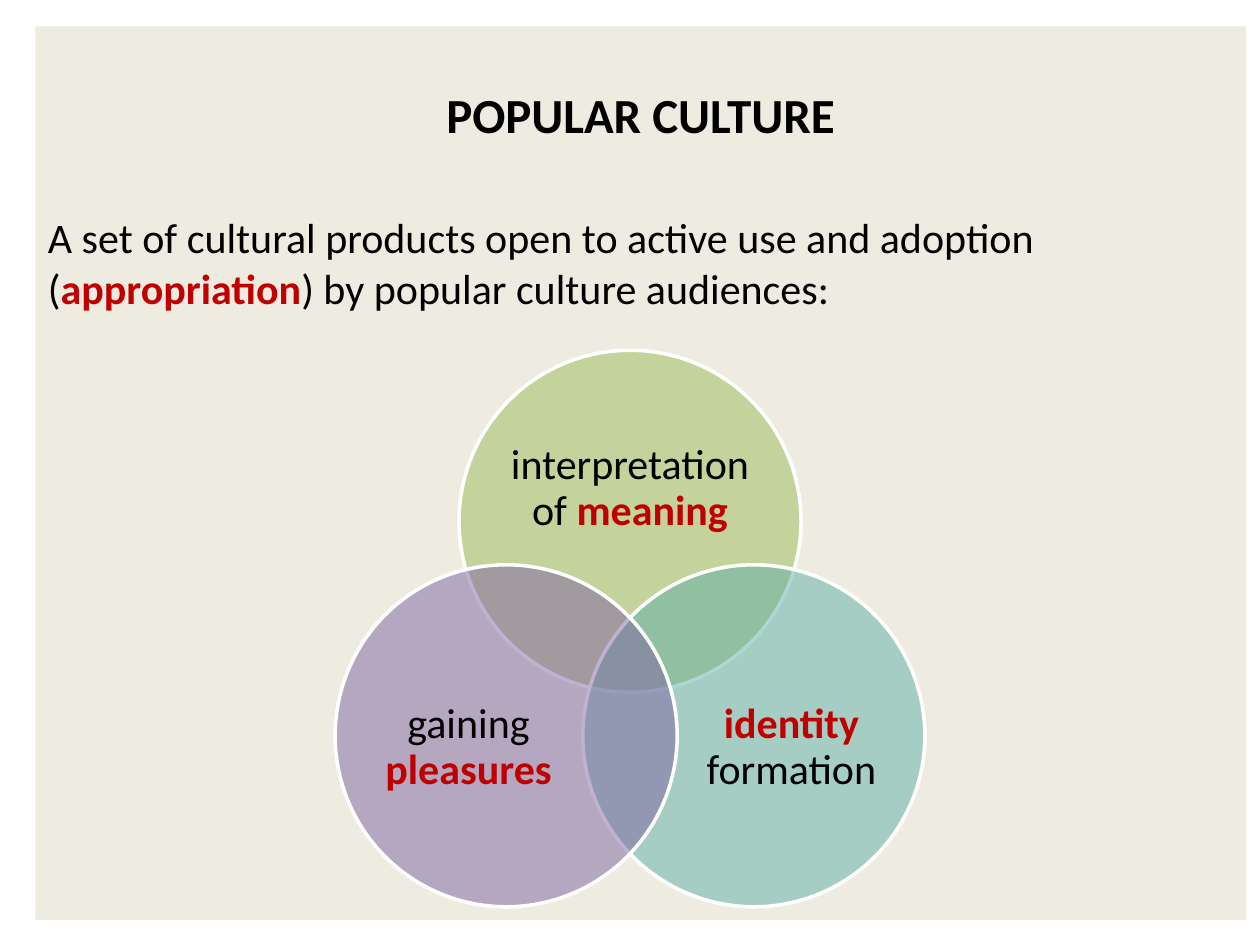
import math
from dataclasses import dataclass

import pptx
import pptx.dml.color
import pptx.enum.shapes
import pptx.enum.text
import pptx.oxml.ns
import pptx.util
from lxml import etree

Inches = pptx.util.Inches
qn = pptx.oxml.ns.qn
ALIGN = pptx.enum.text.PP_ALIGN
ANCHOR = pptx.enum.text.MSO_ANCHOR


@dataclass(frozen=True)
class Theme:
    font: str = "Calibri"
    title_size: int = 28
    text_size: int = 24
    text: str = "000000"
    keyword: str = "C00000"
    panel: str = "EEECE1"
    outline: str = "FFFFFF"
    meaning: str = "9BBB59"
    identity: str = "5EAFA6"
    pleasures: str = "8064A2"


THEME = Theme()
PANEL = (0.28, 0.21, 9.61, 7.09)
VENN = (2.66, 2.78, 4.68, 4.42)

# Each run is (words, is keyword).
DEFINITION = [
    ("A set of cultural products open to active use and adoption (", False),
    ("appropriation", True),
    (") by popular culture audiences:", False),
]
# Colour, angle of the circle, label box as shares of the circle, runs.
CIRCLES = [
    (THEME.meaning, -90, (0.13, 0.18, 0.74, 0.45),
     [("interpretation of ", False), ("meaning", True)]),
    (THEME.identity, 30, (0.31, 0.26, 0.6, 0.55),
     [("identity ", True), ("formation", False)]),
    (THEME.pleasures, 150, (0.09, 0.26, 0.6, 0.55),
     [("gaining ", False), ("pleasures", True)]),
]


def rgb(code):
    return pptx.dml.color.RGBColor.from_string(code)


def inches(box):
    return [Inches(length) for length in box]


def place(placeholder, box):
    (placeholder.left, placeholder.top,
     placeholder.width, placeholder.height) = inches(box)


def add_run(paragraph, words, size, color, bold):
    run = paragraph.add_run()
    run.text = words
    run.font.name = THEME.font
    run.font.size = pptx.util.Pt(size)
    run.font.color.rgb = rgb(color)
    run.font.bold = bold


def add_phrase(paragraph, phrase):
    """Add runs, with keywords bold and in the keyword colour."""
    for words, is_keyword in phrase:
        color = THEME.keyword if is_keyword else THEME.text
        add_run(paragraph, words, THEME.text_size, color, is_keyword)


def set_frame(frame, anchor, left=0, top=0):
    frame.word_wrap = True
    frame.auto_size = pptx.enum.text.MSO_AUTO_SIZE.NONE
    frame.vertical_anchor = anchor
    frame.margin_left = frame.margin_right = Inches(left)
    frame.margin_top, frame.margin_bottom = Inches(top), 0


def add_definition(slide, box):
    """Fill the body panel and set the title over its upper part."""
    left, top, width, height = box
    title, body = slide.shapes.title, slide.placeholders[1]

    place(body, box)
    body.fill.solid()
    body.fill.fore_color.rgb = rgb(THEME.panel)
    set_frame(body.text_frame, ANCHOR.TOP, left=0.1, top=1.47)
    definition = body.text_frame.paragraphs[0]
    definition.alignment = ALIGN.LEFT
    definition.space_before = pptx.util.Pt(0)
    properties = definition._p.get_or_add_pPr()
    properties.set("marL", "0")
    properties.set("indent", "0")
    etree.SubElement(properties, qn("a:buNone"))
    add_phrase(definition, DEFINITION)

    place(title, (left, top + 0.46, width, 0.47))
    set_frame(title.text_frame, ANCHOR.MIDDLE)
    heading = title.text_frame.paragraphs[0]
    heading.alignment = ALIGN.CENTER
    add_run(heading, "POPULAR CULTURE", THEME.title_size, THEME.text, True)
    body._element.addnext(title._element)


def add_circle(slide, box, color):
    circle = slide.shapes.add_shape(
        pptx.enum.shapes.MSO_SHAPE.OVAL, *inches(box))
    circle.shadow.inherit = False
    circle.fill.solid()
    circle.fill.fore_color.rgb = rgb(color)
    solid = circle._element.spPr.find(qn("a:solidFill"))
    etree.SubElement(solid[0], qn("a:alpha"), val="50000")
    circle.line.color.rgb = rgb(THEME.outline)
    circle.line.width = pptx.util.Pt(2)


def add_label(slide, box, phrase):
    frame = slide.shapes.add_textbox(*inches(box)).text_frame
    set_frame(frame, ANCHOR.MIDDLE)
    paragraph = frame.paragraphs[0]
    paragraph.alignment = ALIGN.CENTER
    paragraph.line_spacing = 0.9
    add_phrase(paragraph, phrase)


def add_venn(slide, box):
    """Set three circles evenly around a hub so that they fill the box."""
    left, top, width, height = box
    diameter = 0.58 * width
    reach = (width - diameter) / 2 / math.cos(math.radians(30))
    hub_x, hub_y = left + width / 2, top + diameter / 2 + reach
    for color, angle, (x, y, w, h), phrase in CIRCLES:
        turn = math.radians(angle)
        circle_left = hub_x + reach * math.cos(turn) - diameter / 2
        circle_top = hub_y + reach * math.sin(turn) - diameter / 2
        add_circle(slide, (circle_left, circle_top, diameter, diameter), color)
        add_label(slide, (circle_left + x * diameter, circle_top + y * diameter,
                          w * diameter, h * diameter), phrase)


def main():
    deck = pptx.Presentation()
    deck.slide_width, deck.slide_height = Inches(10), Inches(7.5)
    slide = deck.slides.add_slide(deck.slide_layouts[1])
    add_definition(slide, PANEL)
    add_venn(slide, VENN)
    deck.save("out.pptx")


if __name__ == "__main__":
    main()
